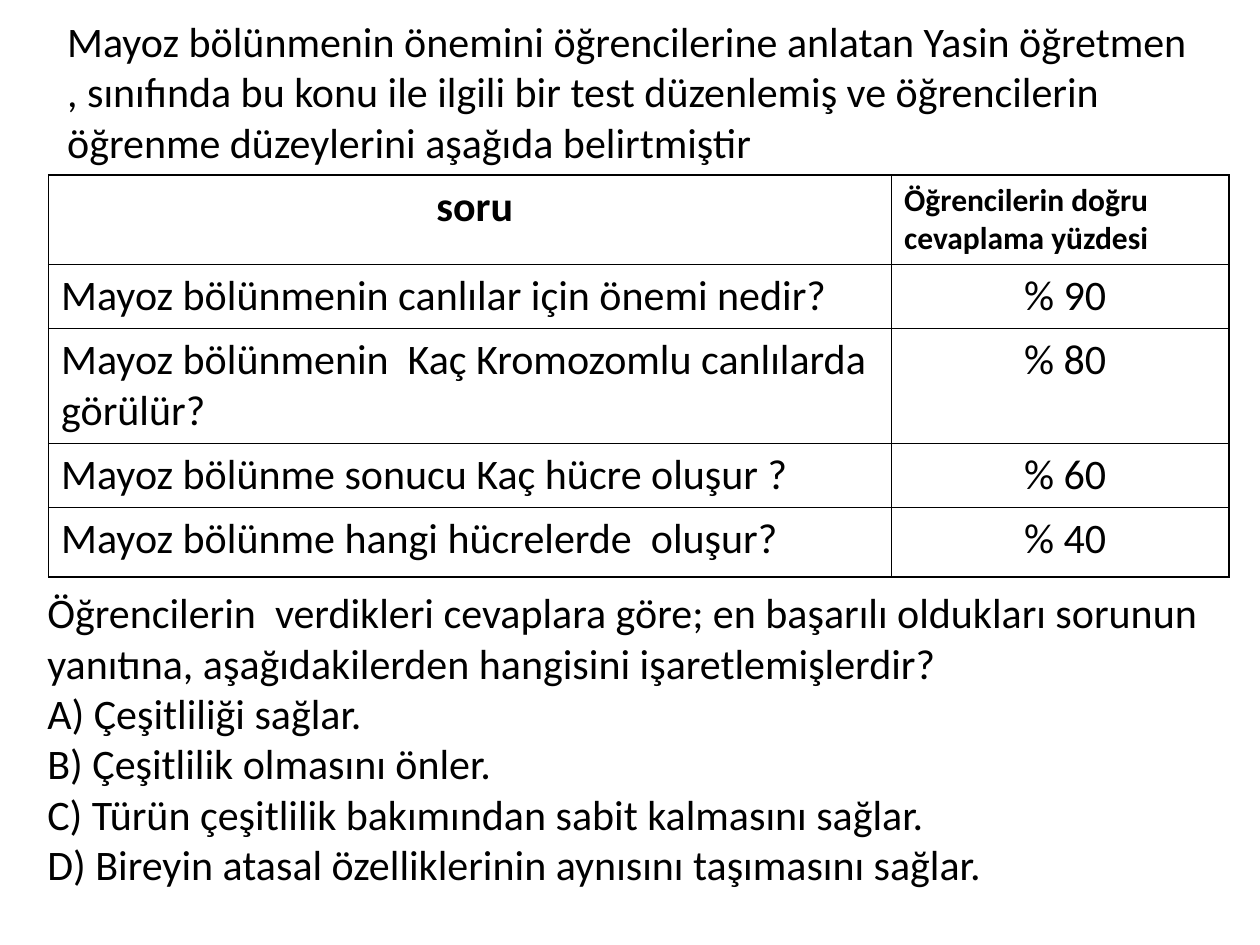
import pptx
import pptx.dml.color
import pptx.enum.text
import pptx.oxml
import pptx.oxml.ns
import pptx.util
from pptx.util import Cm

ALIGN = pptx.enum.text.PP_ALIGN
BLACK, WHITE = "000000", "FFFFFF"
BODY_TEXT = {"size": pptx.util.Pt(24), "name": "Calibri", "bold": False}
FRAME = {
    "word_wrap": True,
    "vertical_anchor": pptx.enum.text.MSO_ANCHOR.TOP,
    "auto_size": pptx.enum.text.MSO_AUTO_SIZE.NONE,
}
PARAGRAPH = {
    "alignment": ALIGN.LEFT,
    "line_spacing": 1.0,
    "space_before": pptx.util.Pt(0),
    "space_after": pptx.util.Pt(0),
}

INTRO = ("Mayoz bölünmenin önemini öğrencilerine anlatan Yasin öğretmen , "
         "sınıfında bu konu ile ilgili bir test düzenlemiş ve öğrencilerin "
         "öğrenme düzeylerini aşağıda belirtmiştir")
QUESTION = [
    "Öğrencilerin  verdikleri cevaplara göre; en başarılı oldukları sorunun "
    "yanıtına, aşağıdakilerden hangisini işaretlemişlerdir?",
    "A) Çeşitliliği sağlar.",
    "B) Çeşitlilik olmasını önler.",
    "C) Türün çeşitlilik bakımından sabit kalmasını sağlar.",
    "D) Bireyin atasal özelliklerinin aynısını taşımasını sağlar.",
]
HEADINGS = (" soru", "Öğrencilerin doğru cevaplama yüzdesi")
RESULTS = [
    ("Mayoz bölünmenin canlılar için önemi nedir?", 90),
    ("Mayoz bölünmenin  Kaç Kromozomlu canlılarda görülür?", 80),
    ("Mayoz bölünme sonucu Kaç hücre oluşur ?", 60),
    ("Mayoz bölünme hangi hücrelerde  oluşur?", 40),
]
COLUMN_SHARE = 0.714
ROW_HEIGHTS = (1.7, 1.2, 1.35, 1.2, 1.4)


def color(value):
    return pptx.dml.color.RGBColor.from_string(value)


def apply(target, values):
    for name, value in values.items():
        setattr(target, name, value)


def write(para, text, **changes):
    span = para.add_run()
    span.text = text
    apply(span.font, BODY_TEXT | changes)
    span.font.color.rgb = color(BLACK)


def place_text(holder, box, lines):
    """Move a placeholder into the box and fill it with unbulleted lines."""
    apply(holder, dict(zip(("left", "top", "width", "height"), box)))
    frame = holder.text_frame
    apply(frame, FRAME)
    for index, line in enumerate(lines):
        para = frame.paragraphs[0] if index == 0 else frame.add_paragraph()
        apply(para, PARAGRAPH)
        write(para, line)
        properties = para._p.get_or_add_pPr()
        properties.set("marL", "0")
        properties.set("indent", "0")
        pptx.oxml.ns.qn("a:buNone")
        properties.append(pptx.oxml.parse_xml(
            f'<a:buNone {pptx.oxml.ns.nsdecls("a")}/>'))


def outline(cell):
    properties = cell._tc.get_or_add_tcPr()
    for side in "LRTB":
        properties.append(pptx.oxml.parse_xml(
            f'<a:ln{side} {pptx.oxml.ns.nsdecls("a")} w="{pptx.util.Pt(1)}">'
            f'<a:solidFill><a:srgbClr val="{BLACK}"/></a:solidFill>'
            f'</a:ln{side}>'))


def fill_cell(cell, text, alignment, **changes):
    outline(cell)
    cell.fill.solid()
    cell.fill.fore_color.rgb = color(WHITE)
    para = cell.text_frame.paragraphs[0]
    para.alignment = alignment
    write(para, text, **changes)


def place_results(page, box):
    left, top, width, height = box
    table = page.shapes.add_table(len(RESULTS) + 1, 2, *box).table
    apply(table, {"first_row": False, "horz_banding": False})
    table.columns[0].width = int(width * COLUMN_SHARE)
    table.columns[1].width = width - table.columns[0].width
    for row, row_height in zip(table.rows, ROW_HEIGHTS):
        row.height = Cm(row_height)

    fill_cell(table.cell(0, 0), HEADINGS[0], ALIGN.CENTER, bold=True)
    fill_cell(table.cell(0, 1), HEADINGS[1], ALIGN.LEFT,
              bold=True, size=pptx.util.Pt(18))
    for index, (question, percent) in enumerate(RESULTS, start=1):
        fill_cell(table.cell(index, 0), question, ALIGN.LEFT)
        fill_cell(table.cell(index, 1), f" % {percent}", ALIGN.CENTER)


def main():
    deck = pptx.Presentation()
    apply(deck, {"slide_width": Cm(25.4), "slide_height": Cm(19.05)})
    page = deck.slides.add_slide(deck.slide_layouts[1])
    page.background.fill.solid()
    page.background.fill.fore_color.rgb = color(WHITE)
    title, body = page.placeholders
    place_text(title, (Cm(1.1), Cm(0.18), Cm(23.2), Cm(3.33)), [INTRO])
    place_text(body, (Cm(0.7), Cm(11.7), Cm(24.2), Cm(6.4)), QUESTION)
    place_results(page, (Cm(0.98), Cm(3.53), Cm(23.8), Cm(sum(ROW_HEIGHTS))))
    deck.save("out.pptx")


if __name__ == "__main__":
    main()
